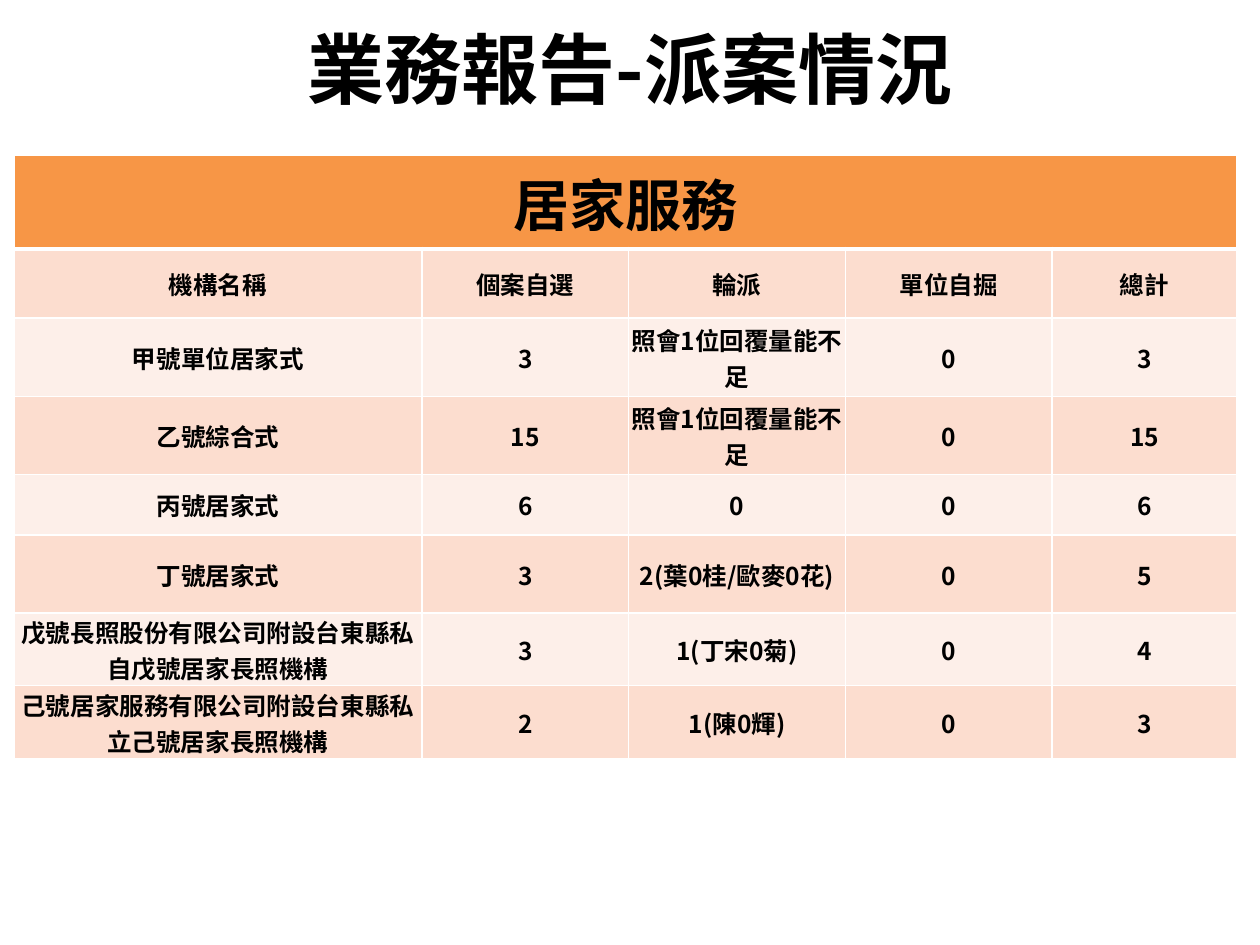
from lxml import etree
from pptx import Presentation
from pptx.dml.color import RGBColor
from pptx.enum.text import MSO_ANCHOR as ANCHOR, PP_ALIGN as ALIGN
from pptx.oxml.ns import qn
from pptx.util import Inches, Pt

FONT = "Noto Sans CJK SC"
BLACK, WHITE, ORANGE = "000000", "FFFFFF", "F79646"
BANDS = ("FCDDCF", "FDEFE9")
COL_WIDTHS = (3.24, 1.64, 1.72, 1.64, 1.47)
ROW_HEIGHTS = (0.32, 0.55, 0.62, 0.62, 0.48, 0.62, 0.54, 0.5)
TABLE_TITLE = "居家服務"
ROWS = (
    ("機構名稱", "個案自選", "輪派", "單位自掘", "總計"),
    ("甲號單位居家式", "3", "照會1位回覆量能不足", "0", "3"),
    ("乙號綜合式", "15", "照會1位回覆量能不足", "0", "15"),
    ("丙號居家式", "6", "0", "0", "6"),
    ("丁號居家式", "3", "2(葉0桂/歐麥0花)", "0", "5"),
    ("戊號長照股份有限公司附設台東縣私自戊號居家長照機構", "3", "1(丁宋0菊)", "0", "4"),
    ("己號居家服務有限公司附設台東縣私立己號居家長照機構", "2", "1(陳0輝)", "0", "3"),
)


def color(value):
    return RGBColor.from_string(value)


def write(tf, text, size):
    p = tf.paragraphs[0]
    p.alignment = ALIGN.CENTER
    r = p.add_run()
    r.text = text
    r.font.size = Pt(size)
    r.font.bold = True
    r.font.name = FONT
    r.font.color.rgb = color(BLACK)
    etree.SubElement(r.font._element, qn("a:ea"), typeface=FONT)


def set_borders(cell, bottom=1, top=1):
    """Draw white lines, widths in points, on all four sides of the cell."""
    tc_pr = cell._tc.get_or_add_tcPr()
    sides = (("L", 1), ("R", 1), ("T", top), ("B", bottom))
    for i, (side, width) in enumerate(sides):
        ln = etree.Element(qn(f"a:ln{side}"), w=str(Pt(width)))
        fill = etree.SubElement(ln, qn("a:solidFill"))
        etree.SubElement(fill, qn("a:srgbClr"), val=WHITE)
        tc_pr.insert(i, ln)


def fill_cell(cell, fill):
    cell.fill.solid()
    cell.fill.fore_color.rgb = color(fill)


def add_title(s, text):
    sp = s.shapes.title
    sp.left, sp.top = Inches(0.12), 0
    sp.width, sp.height = Inches(9.76), Inches(1.07)
    sp.text_frame.vertical_anchor = ANCHOR.MIDDLE
    write(sp.text_frame, text, 44)


def add_header(table):
    for cell in table.rows[0].cells:
        fill_cell(cell, ORANGE)
        set_borders(cell, bottom=3)
    first = table.cell(0, 0)
    first.merge(table.cell(0, len(COL_WIDTHS) - 1))
    write(first.text_frame, TABLE_TITLE, 32)


def add_body_cell(cell, text, row):
    cell.vertical_anchor = ANCHOR.MIDDLE
    cell.margin_left = cell.margin_right = cell.margin_top = Inches(0.01)
    cell.margin_bottom = 0
    fill_cell(cell, BANDS[row % 2])
    set_borders(cell, top=1 if row else 3)
    write(cell.text_frame, text, 14)


def add_case_table(s):
    frame = s.shapes.add_table(
        len(ROW_HEIGHTS), len(COL_WIDTHS), Inches(0.11), Inches(1.23),
        Inches(sum(COL_WIDTHS)), Inches(sum(ROW_HEIGHTS)))
    table = frame.table
    for column, width in zip(table.columns, COL_WIDTHS):
        column.width = Inches(width)
    for row, height in zip(table.rows, ROW_HEIGHTS):
        row.height = Inches(height)
    add_header(table)
    for i, texts in enumerate(ROWS):
        for j, text in enumerate(texts):
            add_body_cell(table.cell(i + 1, j), text, i)


def main():
    prs = Presentation()
    prs.slide_width, prs.slide_height = Inches(10), Inches(7.5)
    s = prs.slides.add_slide(prs.slide_layouts[5])
    add_title(s, "業務報告-派案情況")
    add_case_table(s)
    prs.save("out.pptx")


if __name__ == "__main__":
    main()
